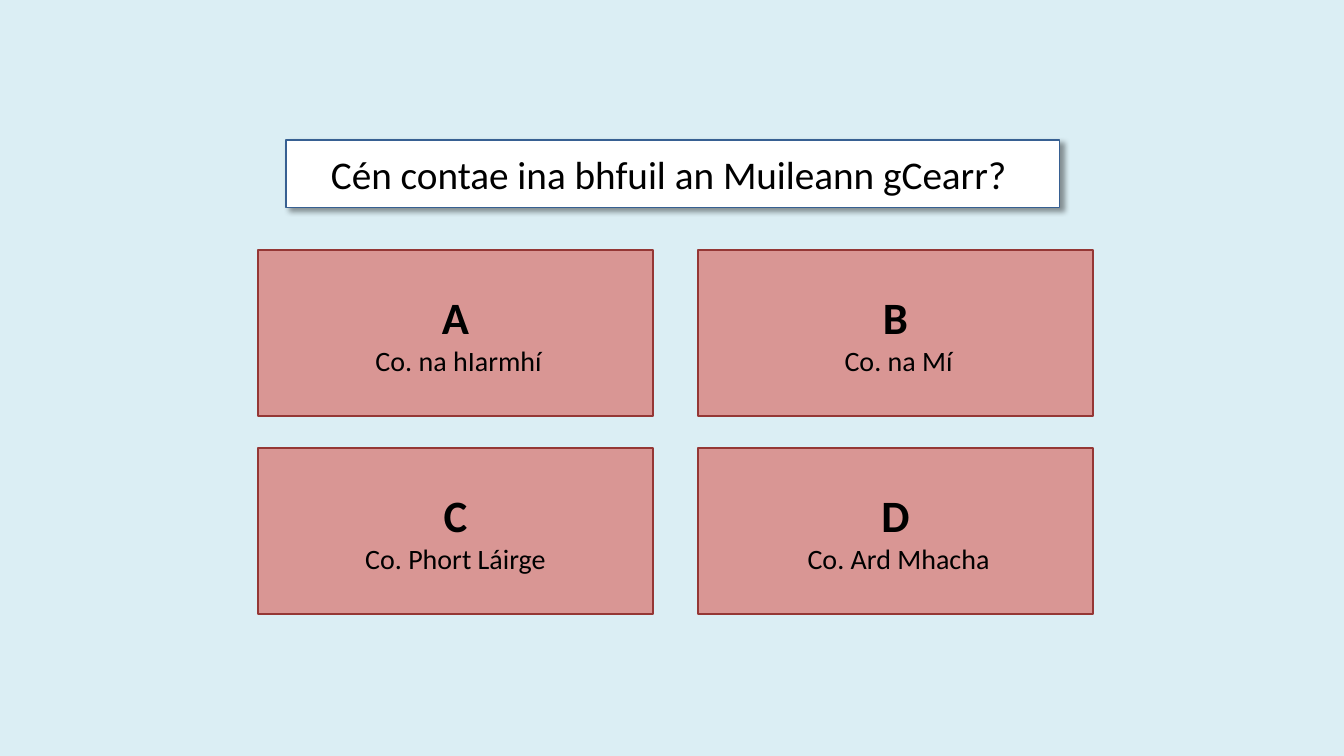
from dataclasses import dataclass

from lxml import etree
from pptx import Presentation
from pptx import util as u
from pptx.dml.color import RGBColor
from pptx.enum import shapes, text
from pptx.oxml import ns

SCALE = 12192000 / 1344
FONT = "Calibri"
COLORS = {
    "back": "DBEEF4",
    "card": "D99694",
    "edge": "953735",
    "white": "FFFFFF",
    "blue": "376092",
    "black": "000000",
}


@dataclass(frozen=True)
class Answer:
    letter: str
    county: str


ANSWERS = [
    Answer("A", " Co. na hIarmhí"),
    Answer("B", " Co. na Mí"),
    Answer("C", "Co. Phort Láirge"),
    Answer("D", " Co. Ard Mhacha"),
]
LEFT, TOP = 258, 250
WIDTH, HEIGHT = 395, 166
STEP_X, STEP_Y = 440, 198


def px(count: int) -> int:
    return round(count * SCALE)


def color(name: str) -> RGBColor:
    return RGBColor.from_string(COLORS[name])


def paint(shape, fill: str, line: str, width: float) -> None:
    shape.fill.solid()
    shape.fill.fore_color.rgb = color(fill)
    shape.line.color.rgb = color(line)
    shape.line.width = u.Pt(width)


def style(para, size: int, bold: bool = False) -> None:
    para.alignment = text.PP_ALIGN.CENTER
    for run in para.runs:
        run.font.name = FONT
        run.font.size = u.Pt(size)
        run.font.bold = bold
        run.font.color.rgb = color("black")


def add_glow(shape) -> None:
    effects = etree.SubElement(shape.element.spPr, ns.qn("a:effectLst"))
    shadow = etree.SubElement(
        effects, ns.qn("a:outerShdw"),
        blurRad=str(u.Pt(4)), dist=str(u.Pt(3)), dir=str(45 * 60000),
        algn="tl", rotWithShape="0",
    )
    tint = etree.SubElement(shadow, ns.qn("a:srgbClr"), val=COLORS["black"])
    etree.SubElement(tint, ns.qn("a:alpha"), val="40000")


def set_title(slide) -> None:
    title = slide.shapes.title
    title.left, title.top = px(286), px(140)
    title.width, title.height = px(774), px(68)
    paint(title, "white", "blue", 0.75)
    add_glow(title)
    frame = title.text_frame
    frame.text = "Cén contae ina bhfuil an Muileann gCearr? "
    frame.word_wrap = True
    frame.auto_size = text.MSO_AUTO_SIZE.NONE
    frame.vertical_anchor = text.MSO_ANCHOR.MIDDLE
    para = frame.paragraphs[0]
    para.space_before = u.Pt(5.6)
    style(para, 28)


def add_card(slide, answer: Answer, left: int, top: int) -> None:
    card = slide.shapes.add_shape(
        shapes.MSO_SHAPE.RECTANGLE, px(left), px(top), px(WIDTH), px(HEIGHT)
    )
    card.shadow.inherit = False
    paint(card, "card", "edge", 2)
    frame = card.text_frame
    frame.word_wrap = True
    frame.vertical_anchor = text.MSO_ANCHOR.MIDDLE
    frame.text = f"{answer.letter}\n{answer.county}"
    letter, county = frame.paragraphs
    style(letter, 32, bold=True)
    style(county, 20)


def main() -> None:
    deck = Presentation()
    deck.slide_width, deck.slide_height = px(1344), px(756)
    slide = deck.slides.add_slide(deck.slide_layouts.get_by_name("Title Only"))
    slide.background.fill.solid()
    slide.background.fill.fore_color.rgb = color("back")
    set_title(slide)
    for index, answer in enumerate(ANSWERS):
        row, col = divmod(index, 2)
        add_card(slide, answer, LEFT + col * STEP_X, TOP + row * STEP_Y)
    deck.save("out.pptx")


if __name__ == "__main__":
    main()
